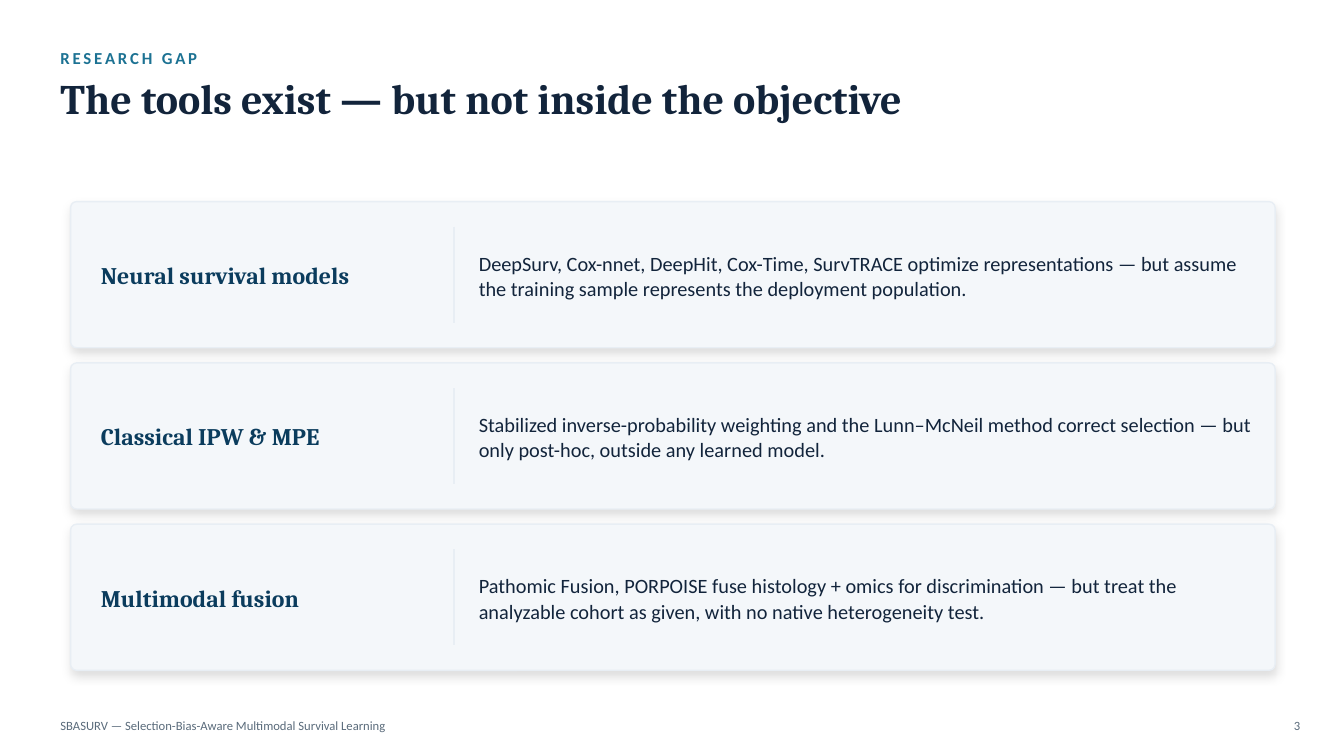
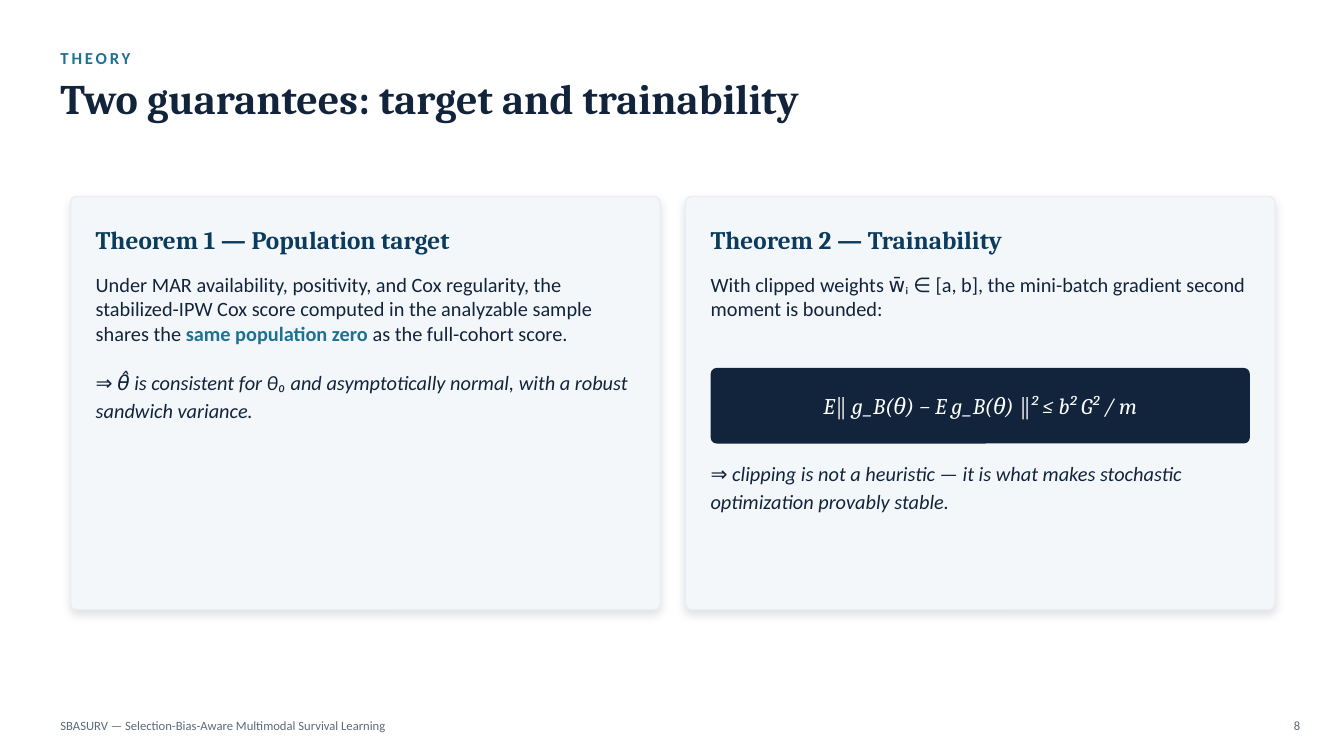
from dataclasses import dataclass, replace
from typing import NamedTuple

from lxml import etree
from pptx import Presentation
from pptx.dml.color import RGBColor
from pptx.enum.shapes import MSO_CONNECTOR, MSO_SHAPE
from pptx.enum.text import MSO_ANCHOR, PP_ALIGN
from pptx.oxml.ns import qn
from pptx.util import Pt

ROUNDED = MSO_SHAPE.ROUNDED_RECTANGLE
STRAIGHT = MSO_CONNECTOR.STRAIGHT
TOP, MIDDLE = MSO_ANCHOR.TOP, MSO_ANCHOR.MIDDLE
LEFT, CENTER, RIGHT = PP_ALIGN.LEFT, PP_ALIGN.CENTER, PP_ALIGN.RIGHT


@dataclass(frozen=True)
class Style:
    size: float
    font: str
    color: str
    bold: bool = False
    italic: bool = False
    tracking: float = 0


class Theme:
    navy, blue, teal = "12243B", "0B3C5D", "1C7293"
    gray, panel, border, white = "5A6B7B", "F4F7FA", "E8EEF4", "FFFFFF"
    serif, sans = "Cambria", "Calibri"
    radius = 4.3
    kicker = Style(12, sans, teal, bold=True, tracking=2)
    title = Style(30, serif, navy, bold=True)
    row_label = Style(17, serif, blue, bold=True)
    heading = Style(18, serif, blue, bold=True)
    body = Style(14.5, sans, navy)
    accent = replace(body, color=teal, bold=True)
    conclusion = replace(body, italic=True)
    formula = Style(16, serif, white, italic=True)
    footer = Style(9, sans, gray)


class Box(NamedTuple):
    left: float
    top: float
    width: float
    height: float

    def points(self):
        return [Pt(length) for length in self]

    def inner(self, dx, dy, width, height):
        return Box(self.left + dx, self.top + dy, width, height)


SLIDE = Box(0, 0, 960, 540)
FOOTER = "SBASURV — Selection-Bias-Aware Multimodal Survival Learning"

GAPS = [
    ("Neural survival models",
     "DeepSurv, Cox-nnet, DeepHit, Cox-Time, SurvTRACE optimize representations — "
     "but assume the training sample represents the deployment population."),
    ("Classical IPW & MPE",
     "Stabilized inverse-probability weighting and the Lunn–McNeil method correct "
     "selection — but only post-hoc, outside any learned model."),
    ("Multimodal fusion",
     "Pathomic Fusion, PORPOISE fuse histology + omics for discrimination — but treat "
     "the analyzable cohort as given, with no native heterogeneity test."),
]


# Shared building blocks
def rgb(value):
    return RGBColor.from_string(value)


def format_run(run, style):
    font = run.font
    font.size, font.name = Pt(style.size), style.font
    font.bold, font.italic = style.bold, style.italic
    font.color.rgb = rgb(style.color)
    if style.tracking:
        run._r.get_or_add_rPr().set("spc", str(int(style.tracking * 100)))


def fill_paragraph(paragraph, pieces, align=LEFT, spacing=1.0):
    paragraph.alignment, paragraph.line_spacing = align, spacing
    for words, style in pieces:
        run = paragraph.add_run()
        run.text = words
        format_run(run, style)


def prepare_frame(frame, anchor):
    frame.word_wrap, frame.vertical_anchor = True, anchor
    frame.margin_left = frame.margin_right = 0
    frame.margin_top = frame.margin_bottom = 0


def add_text(slide, box, words, style, anchor=MIDDLE, align=LEFT, spacing=1.0):
    frame = slide.shapes.add_textbox(*box.points()).text_frame
    prepare_frame(frame, anchor)
    fill_paragraph(frame.paragraphs[0], [(words, style)], align, spacing)
    return frame


def add_panel(slide, box, color):
    panel = slide.shapes.add_shape(ROUNDED, *box.points())
    panel.adjustments[0] = round(Theme.radius / min(box.width, box.height), 3)
    panel.shadow.inherit = False
    panel.fill.solid()
    panel.fill.fore_color.rgb = rgb(color)
    panel.line.fill.background()
    return panel


def add_card(slide, box):
    card = add_panel(slide, box, Theme.panel)
    card.line.color.rgb = rgb(Theme.border)
    card.line.width = Pt(1)
    # Soft shadow straight down
    effects = card._element.spPr.find(qn("a:effectLst"))
    shadow = etree.SubElement(effects, qn("a:outerShdw"), blurRad=str(Pt(7)),
                              dist=str(Pt(3)), dir="5400000", algn="bl",
                              rotWithShape="0")
    tint = etree.SubElement(shadow, qn("a:srgbClr"), val="000000")
    etree.SubElement(tint, qn("a:alpha"), val="12000")


def add_divider(slide, x, top, bottom):
    divider = slide.shapes.add_connector(STRAIGHT, Pt(x), Pt(top), Pt(x), Pt(bottom))
    divider.line.color.rgb = rgb(Theme.border)
    divider.line.width = Pt(1.5)
    etree.SubElement(divider._element.spPr, qn("a:effectLst"))


def add_page(deck, kicker, title, number):
    slide = deck.slides.add_slide(deck.slide_layouts[6])
    slide.background.fill.solid()
    slide.background.fill.fore_color.rgb = rgb(Theme.white)
    # Header
    add_text(slide, SLIDE.inner(43.2, 30.24, 576, 21.6), kicker, Theme.kicker)
    add_text(slide, SLIDE.inner(43.2, 51.84, 871.2, 64.8), title, Theme.title, TOP)
    # Footer
    add_text(slide, SLIDE.inner(43.2, 507.6, 648, 21.6), FOOTER, Theme.footer)
    add_text(slide, SLIDE.inner(892.8, 507.6, 36, 21.6), str(number), Theme.footer,
             align=RIGHT)
    return slide


# Research gap: one row per family of tools
def add_gap_row(slide, box, label, description):
    add_card(slide, box)
    add_text(slide, box.inner(21.6, 12.96, 244.8, 79.2), label, Theme.row_label)
    add_divider(slide, box.left + 273.6, box.top + 18, box.top + 86.4)
    add_text(slide, box.inner(291.6, 12.96, 554.4, 79.2), description, Theme.body,
             spacing=1.05)


def build_gap_slide(deck):
    slide = add_page(deck, "RESEARCH GAP",
                     "The tools exist — but not inside the objective", 3)
    first_row = Box(50.4, 144, 860.4, 104.4)
    pitch = first_row.height + 10.8
    for index, (label, description) in enumerate(GAPS):
        row = first_row._replace(top=first_row.top + index * pitch)
        add_gap_row(slide, row, label, description)


# Theory: two theorem cards
def add_theorem_card(slide, box, heading):
    add_card(slide, box)
    add_text(slide, box.inner(18, 14.4, 388.8, 32.4), heading, Theme.heading)


def add_target_theorem(slide, box):
    add_theorem_card(slide, box, "Theorem 1 — Population target")
    frame = add_text(
        slide, box.inner(18, 54, 388.8, 223.2),
        "Under MAR availability, positivity, and Cox regularity, the stabilized-IPW "
        "Cox score computed in the analyzable sample shares the ", Theme.body, TOP)
    fill_paragraph(frame.paragraphs[0], [
        ("same population zero", Theme.accent),
        (" as the full-cohort score.", Theme.body)])
    consequence = frame.add_paragraph()
    consequence.space_before = Pt(16)
    fill_paragraph(consequence, [
        ("⇒ θ̂ is consistent for θ₀ and asymptotically normal, with a robust "
         "sandwich variance.", Theme.conclusion)], spacing=1.12)


def add_trainability_theorem(slide, box):
    add_theorem_card(slide, box, "Theorem 2 — Trainability")
    add_text(slide, box.inner(18, 54, 388.8, 64.8),
             "With clipped weights w̄ᵢ ∈ [a, b], the mini-batch gradient second "
             "moment is bounded:", Theme.body, TOP)
    # Bound
    bound = add_panel(slide, box.inner(18, 122.4, 385.2, 54), Theme.navy)
    prepare_frame(bound.text_frame, MIDDLE)
    fill_paragraph(bound.text_frame.paragraphs[0],
                   [("E‖ g_B(θ) − E g_B(θ) ‖² ≤ b² G² / m", Theme.formula)], CENTER)
    add_text(slide, box.inner(18, 187.2, 388.8, 86.4),
             "⇒ clipping is not a heuristic — it is what makes stochastic "
             "optimization provably stable.", Theme.conclusion, TOP, spacing=1.12)


def build_theory_slide(deck):
    slide = add_page(deck, "THEORY", "Two guarantees: target and trainability", 8)
    left_card = Box(50.4, 140.4, 421.2, 295.2)
    right_card = left_card._replace(left=left_card.left + left_card.width + 18)
    add_target_theorem(slide, left_card)
    add_trainability_theorem(slide, right_card)


def main():
    deck = Presentation()
    deck.slide_width, deck.slide_height = Pt(SLIDE.width), Pt(SLIDE.height)
    build_gap_slide(deck)
    build_theory_slide(deck)
    deck.save("out.pptx")


if __name__ == "__main__":
    main()
